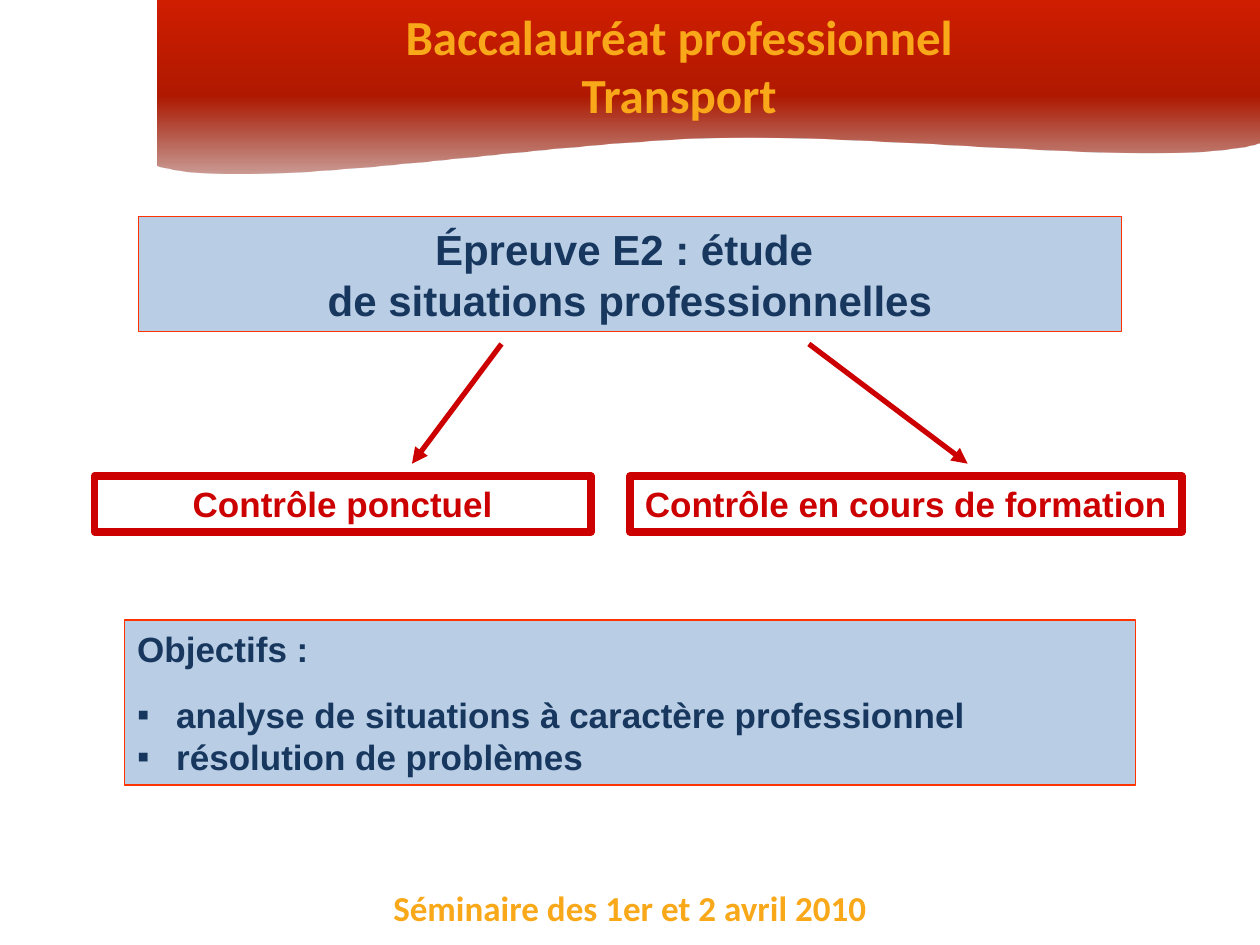
"""Build the slide on exam E2 of the transport baccalaureate."""
from lxml import etree
from pptx import Presentation
from pptx.dml.color import RGBColor
from pptx.enum.shapes import MSO_CONNECTOR, MSO_SHAPE
from pptx.enum.text import MSO_ANCHOR, MSO_AUTO_SIZE, PP_ALIGN
from pptx.oxml.ns import qn
from pptx.util import Inches, Pt

RECTANGLE = MSO_SHAPE.RECTANGLE
STRAIGHT = MSO_CONNECTOR.STRAIGHT
MIDDLE, TOP = MSO_ANCHOR.MIDDLE, MSO_ANCHOR.TOP
GROW, FIXED = MSO_AUTO_SIZE.SHAPE_TO_FIT_TEXT, MSO_AUTO_SIZE.NONE
CENTER, LEFT = PP_ALIGN.CENTER, PP_ALIGN.LEFT

THEME = {
    "gold": "F8A818", "navy": "17375E", "sky": "B9CDE5",
    "orange": "FF3300", "red": "CC0000",
    "banner": [(0, "851300", 42), (45, "AF1900", 100), (100, "D01D00", 100)],
    "display": "Calibri", "body": "Arial",
    "title": 28, "heading": 24, "text": 20,
}

deck = Presentation()
deck.slide_width, deck.slide_height = Inches(10), Inches(7.5)
page = deck.slides.add_slide(deck.slide_layouts[6])
shapes = page.shapes


def share(*percents):
    """Turn alternating percentages of slide width and height into lengths."""
    sides = (deck.slide_width, deck.slide_height)
    return [round(sides[i % 2] * value / 100) for i, value in enumerate(percents)]


def write(box, lines, size, color, font=THEME["body"], align=CENTER,
          anchor=TOP, fit=FIXED, bullets_from=None):
    """Fill a box with bold lines, bulleted from the given line onwards."""
    frame = box.text_frame
    frame.word_wrap, frame.auto_size, frame.vertical_anchor = True, fit, anchor
    for index, line in enumerate(lines):
        para = frame.paragraphs[0] if index == 0 else frame.add_paragraph()
        para.alignment = align
        if bullets_from is not None and index >= bullets_from:
            properties = para._p.get_or_add_pPr()
            properties.set("marL", str(Inches(0.31)))
            properties.set("indent", str(-Inches(0.31)))
            etree.SubElement(properties, qn("a:buFont")).set("typeface", THEME["body"])
            etree.SubElement(properties, qn("a:buChar")).set("char", "▪")
            if index == bullets_from:
                para.space_before = Pt(14)
        span = para.add_run()
        span.text = line
        span.font.name, span.font.size, span.font.bold = font, Pt(size), True
        span.font.color.rgb = RGBColor.from_string(THEME[color])


footer = shapes.add_textbox(*share(25, 93.2, 50, 5.87))
write(footer, ["Séminaire des 1er et 2 avril 2010"], THEME["text"], "gold",
      font=THEME["display"], fit=GROW)

wave = [
    [(100, 15.07), (92.9, 17.87), (71.6, 14.13), (57, 14.53)],
    [(57, 14.53), (42.4, 14.93), (19.9, 20.4), (12.5, 17.47)],
]
steps = 40
outline = [share(100, 0)]
for curve in wave:
    for step in range(steps + 1):
        t = step / steps
        weights = ((1 - t) ** 3, 3 * t * (1 - t) ** 2, 3 * t ** 2 * (1 - t), t ** 3)
        outline.append(share(*(sum(w * point[axis] for w, point in zip(weights, curve))
                               for axis in (0, 1))))
builder = shapes.build_freeform(*share(12.5, 0))
builder.add_line_segments(outline, close=True)
banner = builder.convert_to_shape()
banner.shadow.inherit = False
banner.line.fill.background()
banner.fill.gradient()
banner.fill.gradient_angle = 90
stops = banner._element.spPr.find(qn("a:gradFill")).find(qn("a:gsLst"))
for stop in list(stops):
    stops.remove(stop)
for position, color, opacity in THEME["banner"]:
    stop = etree.SubElement(stops, qn("a:gs"), pos=str(position * 1000))
    shade = etree.SubElement(stop, qn("a:srgbClr"), val=color)
    etree.SubElement(shade, qn("a:alpha"), val=str(opacity * 1000))

title = shapes.add_textbox(*share(28.9, 0, 50, 13.87))
write(title, ["Baccalauréat professionnel", "Transport"], THEME["title"], "gold",
      font=THEME["display"], fit=GROW)

panel = {"color": "navy", "anchor": MIDDLE}
control = {"size": THEME["text"], "color": "red", "fit": GROW}
boxes = [
    ((11, 22.93, 78, 12.13), "sky", "orange", 0.75,
     ["Épreuve E2 : étude ", "de situations professionnelles"],
     {**panel, "size": THEME["heading"]}),
    ((7.5, 50.4, 39.4, 5.87), None, "red", 4.5, ["Contrôle ponctuel"], control),
    ((50, 50.4, 43.8, 5.87), None, "red", 4.5,
     ["Contrôle en cours de formation"], control),
    ((9.9, 65.6, 80.2, 17.47), "sky", "orange", 0.75,
     ["Objectifs :", "analyse de situations à caractère professionnel",
      "résolution de problèmes"],
     {**panel, "size": THEME["text"], "align": LEFT, "bullets_from": 1}),
]
for area, fill, border, width, lines, style in boxes:
    box = shapes.add_shape(RECTANGLE, *share(*area))
    box.shadow.inherit = False
    if fill:
        box.fill.solid()
        box.fill.fore_color.rgb = RGBColor.from_string(THEME[fill])
    else:
        box.fill.background()
    box.line.color.rgb = RGBColor.from_string(THEME[border])
    box.line.width = Pt(width)
    write(box, lines, **style)

for start, end in ((39.8, 32.7), (64.2, 76.8)):
    arrow = shapes.add_connector(STRAIGHT, *share(start, 36.4, end, 49.07))
    arrow.line.color.rgb = RGBColor.from_string(THEME["red"])
    arrow.line.width = Pt(3)
    etree.SubElement(arrow.line._get_or_add_ln(), qn("a:tailEnd"), type="triangle")
    etree.SubElement(arrow._element.spPr, qn("a:effectLst"))

deck.save("out.pptx")
